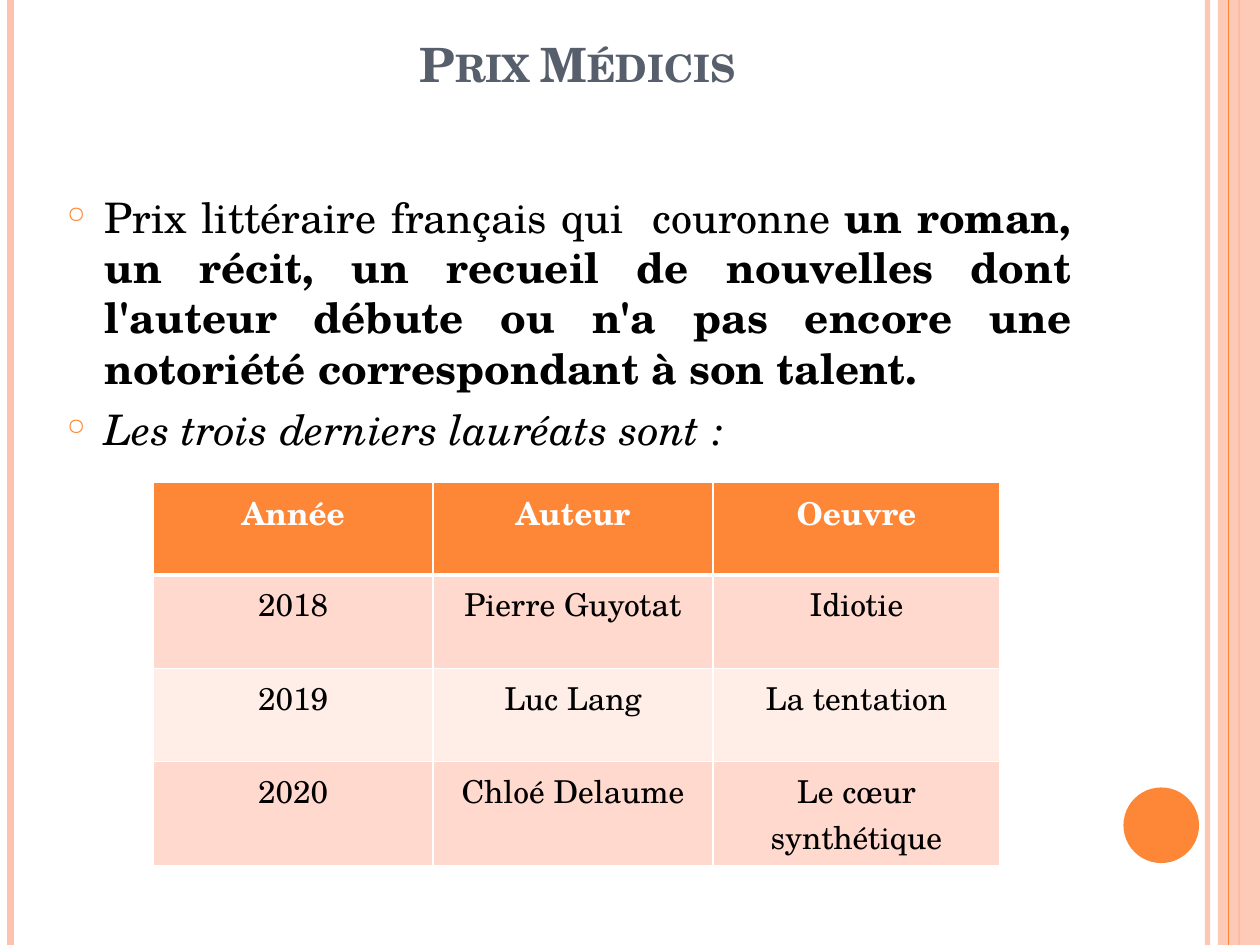
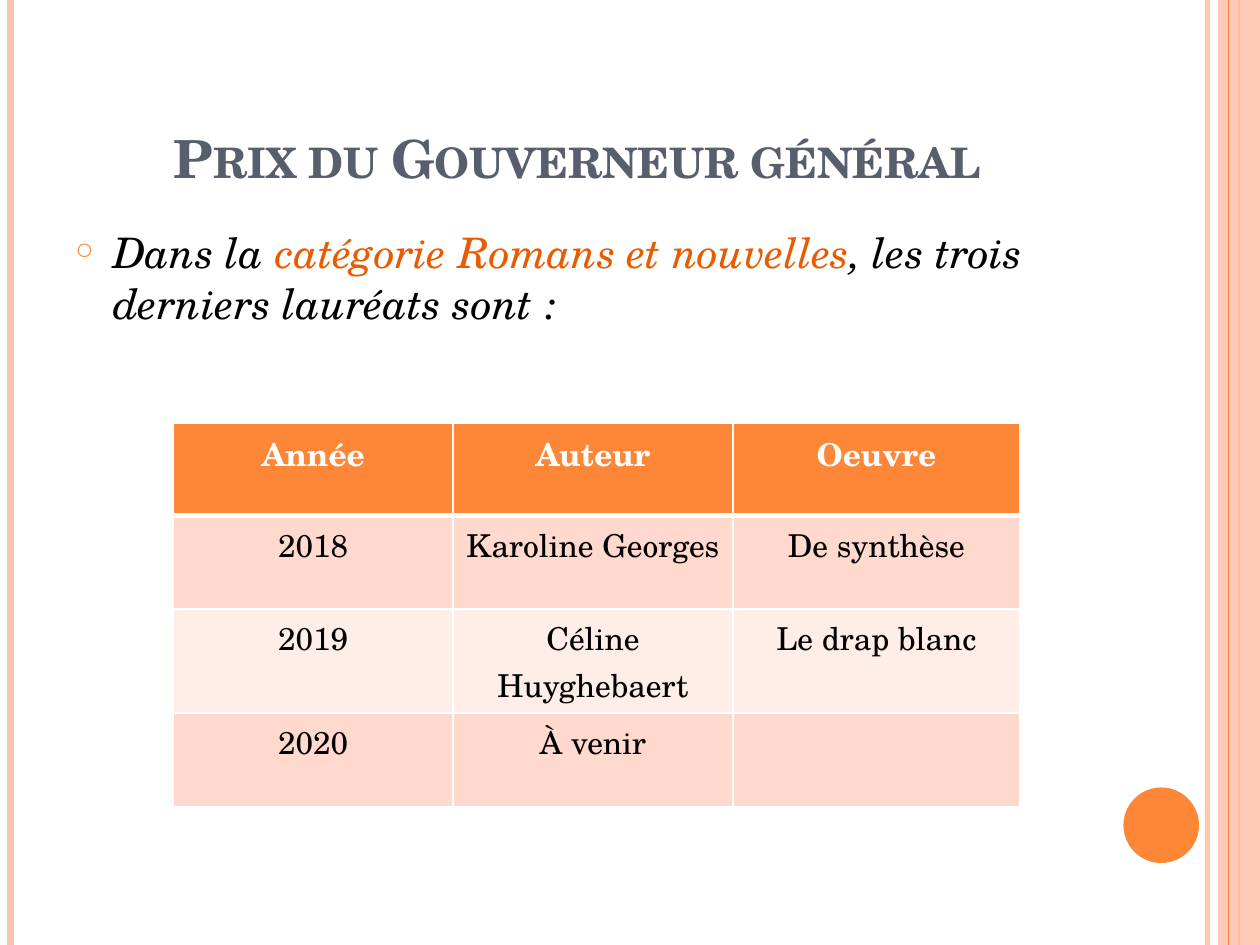
from dataclasses import dataclass
from typing import NamedTuple, Optional, Union

from lxml.etree import SubElement
from pptx import Presentation
from pptx.dml.color import RGBColor
from pptx.enum.shapes import MSO_CONNECTOR, MSO_SHAPE
from pptx.enum.text import MSO_ANCHOR, MSO_AUTO_SIZE, PP_ALIGN
from pptx.oxml.ns import qn
from pptx.util import Inches, Length, Pt

SLIDE_WIDTH = Inches(10)
SLIDE_HEIGHT = Inches(7.5)
GRID_COLUMNS = 120
GRID_ROWS = 90
TITLE_ONLY_LAYOUT = 5


@dataclass(frozen=True)
class Theme:
    font: str = "TeX Gyre Schola"
    accent: str = "FE8637"
    band: str = "FEC3AE"
    title: str = "575F6D"
    text: str = "000000"
    emphasis: str = "E75C01"
    white: str = "FFFFFF"
    row_dark: str = "FFD9CE"
    row_light: str = "FFEDE8"
    body_size: float = 24
    table_size: float = 18
    bullet_percent: int = 55


THEME = Theme()


class Box(NamedTuple):
    left: float
    top: float
    width: float
    height: float


class Rule(NamedTuple):
    column: float
    color: str
    weight: float
    opacity: int = 100


class FilledShape(NamedTuple):
    preset: MSO_SHAPE
    box: Box
    color: str
    opacity: int = 100


class Run(NamedTuple):
    text: str
    bold: bool = False
    italic: bool = False
    color: str = THEME.text


class Bullet(NamedTuple):
    runs: tuple[Run, ...]
    align: PP_ALIGN = PP_ALIGN.LEFT


class PrizeSlide(NamedTuple):
    title: str
    title_box: Box
    title_size: float
    title_bottom_rows: float
    body_box: Box
    bullets: tuple[Bullet, ...]
    table_left: float
    table_top: float
    two_line_row: int
    winners: tuple[tuple[str, str, str], ...]


HEADINGS = ("Année", "Auteur", "Oeuvre")
TABLE_COLUMNS = (26.65, 26.65, 27.35)
HEADER_HEIGHT = 8.8
ROW_HEIGHT = 8.9
TWO_LINE_HEIGHT = 9.9

DECORATIONS: tuple[Union[Rule, FilledShape], ...] = (
    Rule(115, THEME.band, 3, 93),
    Rule(1, THEME.band, 4.5),
    Rule(118, THEME.accent, 1.5),
    FilledShape(MSO_SHAPE.RECTANGLE, Box(116, 0, 4, GRID_ROWS), THEME.band, 87),
    Rule(117, THEME.accent, 0.75),
    FilledShape(MSO_SHAPE.OVAL, Box(107, 75, 7.2, 7.2), THEME.accent),
)

PRIZES = (
    PrizeSlide(
        title="Prix Médicis",
        title_box=Box(6, 3.6, 98, 11.2),
        title_size=27,
        title_bottom_rows=6,
        body_box=Box(5.2, 17.6, 98, 64),
        bullets=(
            Bullet(
                (
                    Run("Prix littéraire français qui  couronne "),
                    Run(
                        "un roman, un récit, un recueil de nouvelles dont l'auteur débute "
                        "ou n'a pas encore une notoriété correspondant à son talent. ",
                        bold=True,
                    ),
                ),
                PP_ALIGN.JUSTIFY,
            ),
            Bullet((Run("Les trois derniers lauréats sont :", italic=True),)),
        ),
        table_left=14.6,
        table_top=45.95,
        two_line_row=3,
        winners=(
            ("2018", "Pierre Guyotat", "Idiotie"),
            ("2019", "Luc Lang", "La tentation"),
            ("2020", "Chloé Delaume", "Le cœur synthétique"),
        ),
    ),
    PrizeSlide(
        title="Prix du Gouverneur général",
        title_box=Box(6, 3.6, 98, 15),
        title_size=30,
        title_bottom_rows=0.6,
        body_box=Box(6, 21, 98, 64),
        bullets=(
            Bullet(
                (
                    Run("Dans la ", italic=True),
                    Run("catégorie Romans et nouvelles", italic=True, color=THEME.emphasis),
                    Run(", les trois derniers lauréats sont :", italic=True),
                )
            ),
        ),
        table_left=16.5,
        table_top=40.3,
        two_line_row=2,
        winners=(
            ("2018", "Karoline Georges", "De synthèse"),
            ("2019", "Céline Huyghebaert", "Le drap blanc"),
            ("2020", "À venir", ""),
        ),
    ),
)


def columns(count: float) -> Length:
    return Length(round(SLIDE_WIDTH * count / GRID_COLUMNS))


def rows(count: float) -> Length:
    return Length(round(SLIDE_HEIGHT * count / GRID_ROWS))


def place(box: Box) -> tuple[Length, Length, Length, Length]:
    return columns(box.left), rows(box.top), columns(box.width), rows(box.height)


def write(paragraph, text: str, *, size: float, color: str, bold: bool = False,
          italic: bool = False, small_caps: bool = False,
          align: Optional[PP_ALIGN] = None) -> None:
    run = paragraph.add_run()
    run.text = text
    run.font.name = THEME.font
    run.font.size = Pt(size)
    run.font.bold = bold
    run.font.italic = italic
    run.font.color.rgb = RGBColor.from_string(color)
    if small_caps:
        run.font._element.set("cap", "small")
    if align is not None:
        paragraph.alignment = align


def set_opacity(element, opacity: int) -> None:
    if opacity < 100:
        color = next(element.iter(qn("a:srgbClr")))
        SubElement(color, qn("a:alpha"), val=str(opacity * 1000))


def draw_rule(slide, rule: Rule) -> None:
    x = columns(rule.column)
    connector = slide.shapes.add_connector(MSO_CONNECTOR.STRAIGHT, x, 0, x, SLIDE_HEIGHT)
    connector.line.color.rgb = RGBColor.from_string(rule.color)
    connector.line.width = Pt(rule.weight)
    properties = connector._element.spPr
    set_opacity(properties, rule.opacity)
    SubElement(properties, qn("a:effectLst"))


def draw_filled_shape(slide, item: FilledShape) -> None:
    shape = slide.shapes.add_shape(item.preset, *place(item.box))
    shape.shadow.inherit = False
    shape.fill.solid()
    shape.fill.fore_color.rgb = RGBColor.from_string(item.color)
    shape.line.fill.background()
    set_opacity(shape._element.spPr, item.opacity)


def draw_decorations(slide) -> None:
    for item in DECORATIONS:
        if isinstance(item, Rule):
            draw_rule(slide, item)
        else:
            draw_filled_shape(slide, item)


def draw_title(slide, prize: PrizeSlide) -> None:
    title = slide.shapes.title
    title.left, title.top, title.width, title.height = place(prize.title_box)
    frame = title.text_frame
    frame.auto_size = MSO_AUTO_SIZE.NONE
    frame.vertical_anchor = MSO_ANCHOR.BOTTOM
    frame.margin_bottom = rows(prize.title_bottom_rows)
    write(frame.paragraphs[0], prize.title, size=prize.title_size, color=THEME.title,
          bold=True, small_caps=True, align=PP_ALIGN.CENTER)


def add_bullet_mark(paragraph) -> None:
    properties = paragraph._p.get_or_add_pPr()
    indent = columns(3.6)
    properties.set("marL", str(indent))
    properties.set("indent", str(-indent))
    color = SubElement(properties, qn("a:buClr"))
    SubElement(color, qn("a:srgbClr"), val=THEME.accent)
    SubElement(properties, qn("a:buSzPct"), val=str(THEME.bullet_percent * 1000))
    SubElement(properties, qn("a:buChar"), char="○")


def draw_body(slide, prize: PrizeSlide) -> None:
    frame = slide.shapes.add_textbox(*place(prize.body_box)).text_frame
    frame.word_wrap = True
    for index, bullet in enumerate(prize.bullets):
        paragraph = frame.add_paragraph() if index else frame.paragraphs[0]
        paragraph.space_before = Pt(6)
        add_bullet_mark(paragraph)
        for run in bullet.runs:
            write(paragraph, run.text, size=THEME.body_size, color=run.color,
                  bold=run.bold, italic=run.italic, align=bullet.align)


def set_borders(cell, top: float, bottom: float) -> None:
    properties = cell._tc.get_or_add_tcPr()
    weights = {"a:lnL": 1, "a:lnR": 1, "a:lnT": top, "a:lnB": bottom}
    for index, (tag, weight) in enumerate(weights.items()):
        border = SubElement(properties, qn(tag), w=str(Pt(weight)))
        fill = SubElement(border, qn("a:solidFill"))
        SubElement(fill, qn("a:srgbClr"), val=THEME.white)
        properties.insert(index, border)


def draw_table(slide, prize: PrizeSlide) -> None:
    heights = [HEADER_HEIGHT] + [ROW_HEIGHT] * len(prize.winners)
    heights[prize.two_line_row] = TWO_LINE_HEIGHT
    box = Box(prize.table_left, prize.table_top, sum(TABLE_COLUMNS), sum(heights))
    table = slide.shapes.add_table(len(heights), len(TABLE_COLUMNS), *place(box)).table
    for column, width in zip(table.columns, TABLE_COLUMNS):
        column.width = columns(width)
    for row, height in zip(table.rows, heights):
        row.height = rows(height)
    for row_index, values in enumerate((HEADINGS, *prize.winners)):
        is_header = row_index == 0
        banding = THEME.row_dark if row_index % 2 else THEME.row_light
        for column_index, value in enumerate(values):
            cell = table.cell(row_index, column_index)
            cell.fill.solid()
            cell.fill.fore_color.rgb = RGBColor.from_string(THEME.accent if is_header else banding)
            set_borders(cell, top=3 if row_index == 1 else 1, bottom=3 if is_header else 1)
            if value:
                write(cell.text_frame.paragraphs[0], value, size=THEME.table_size,
                      color=THEME.white if is_header else THEME.text,
                      bold=is_header, align=PP_ALIGN.CENTER)


def main() -> None:
    presentation = Presentation()
    presentation.slide_width = SLIDE_WIDTH
    presentation.slide_height = SLIDE_HEIGHT
    for prize in PRIZES:
        slide = presentation.slides.add_slide(presentation.slide_layouts[TITLE_ONLY_LAYOUT])
        draw_decorations(slide)
        draw_title(slide, prize)
        draw_body(slide, prize)
        draw_table(slide, prize)
    presentation.save("out.pptx")


if __name__ == "__main__":
    main()
